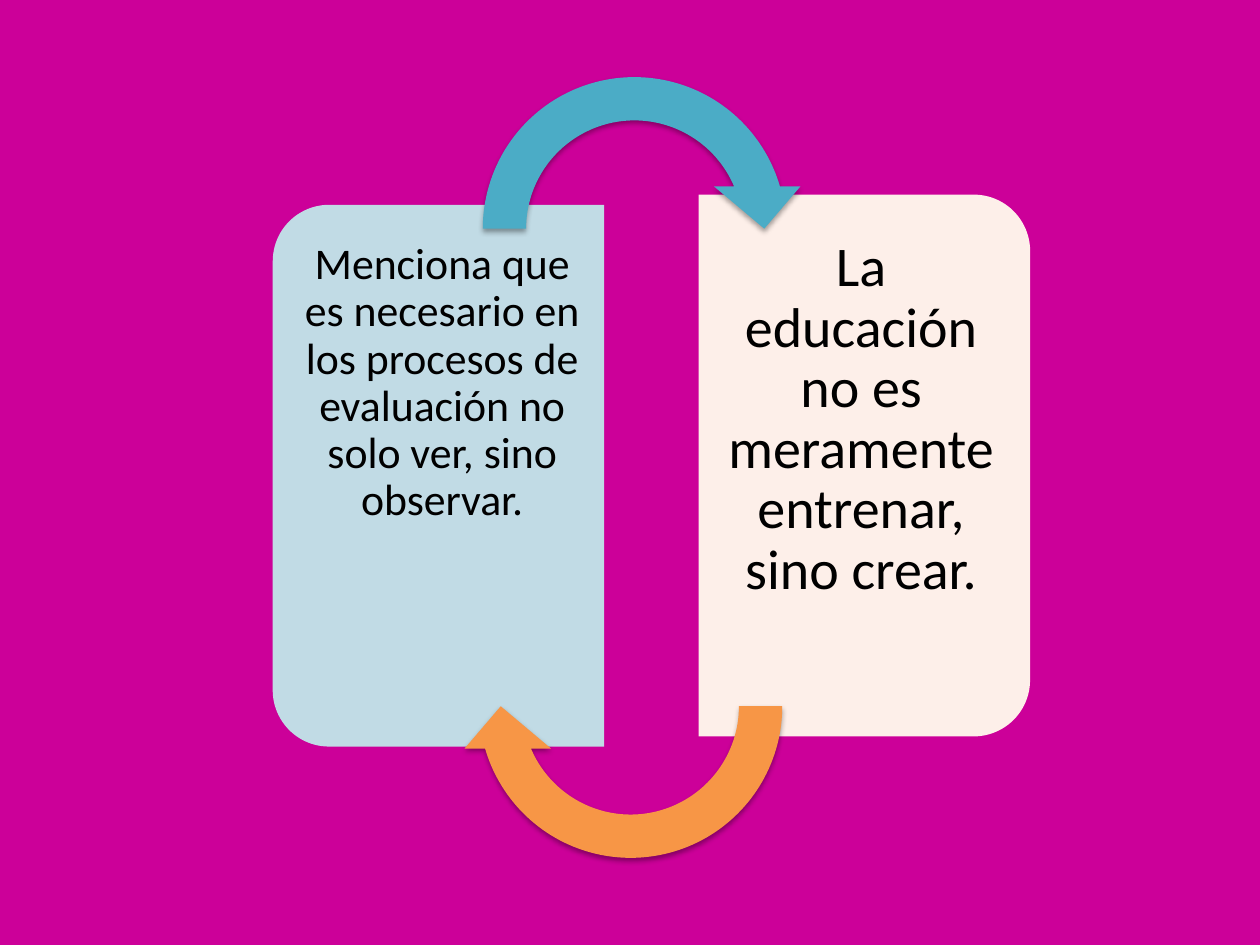
from lxml import etree
from pptx import Presentation
from pptx.dml.color import RGBColor
from pptx.enum.shapes import MSO_SHAPE
from pptx.enum.text import MSO_ANCHOR, PP_ALIGN
from pptx.oxml.ns import qn
from pptx.util import Inches, Pt

CARD = MSO_SHAPE.ROUND_2_SAME_RECTANGLE
ARROW = MSO_SHAPE.CIRCULAR_ARROW
TOP = MSO_ANCHOR.TOP
CENTER = PP_ALIGN.CENTER

THEME = {
    "font": "Calibri",
    "background": "CC0099",
    "ink": "000000",
    "observe": {"card": "C1DBE5", "arrow": "4BACC6", "size": 25},
    "create": {"card": "FDEFE9", "arrow": "F79646", "size": 32},
}

deck = Presentation()
deck.slide_width, deck.slide_height = Inches(10), Inches(7.5)
COLUMN = deck.slide_width / 100
ROW = deck.slide_height / 75
slide = deck.slides.add_slide(deck.slide_layouts[6])
slide.background.fill.solid()
slide.background.fill.fore_color.rgb = RGBColor.from_string(THEME["background"])


def place(left, top, width, height):
    return int(left * COLUMN), int(top * ROW), int(width * COLUMN), int(height * ROW)


def add_figure(preset, box, turn, color, adjustments):
    figure = slide.shapes.add_shape(preset, *place(*box))
    figure.rotation = turn
    figure.shadow.inherit = False
    figure.fill.solid()
    figure.fill.fore_color.rgb = RGBColor.from_string(color)
    figure.line.fill.background()
    for index, value in enumerate(adjustments):
        figure.adjustments[index] = value
    return figure


ideas = [
    ("observe", "Menciona que es necesario en los procesos de evaluación no solo ver, sino observar.",
     (13.3, 24.6), 270, (22.9, 17.5), (1, 1.7, 1.6, 1.7)),
    ("create", "La educación no es meramente entrenar, sino crear.",
     (47.1, 23.8), 90, (55.5, 16.7), (2, 2.2, 1.3, 2.2)),
]
for idea, wording, card_corner, turn, text_corner, insets in ideas:
    add_figure(CARD, (*card_corner, 43, 26.3), turn, THEME[idea]["card"], (0.17, 0))
    statement = slide.shapes.add_textbox(*place(*text_corner, 25, 40.5)).text_frame
    left, top, right, bottom = insets
    frame_format = {
        "word_wrap": True,
        "vertical_anchor": TOP,
        "margin_left": int(left * COLUMN),
        "margin_top": int(top * ROW),
        "margin_right": int(right * COLUMN),
        "margin_bottom": int(bottom * ROW),
    }
    for name, value in frame_format.items():
        setattr(statement, name, value)
    sentence = statement.paragraphs[0]
    for name, value in {"alignment": CENTER, "line_spacing": 0.9}.items():
        setattr(sentence, name, value)
    words = sentence.add_run()
    words.text = wording
    for name, value in {"name": THEME["font"], "size": Pt(THEME[idea]["size"])}.items():
        setattr(words.font, name, value)
    words.font.color.rgb = RGBColor.from_string(THEME["ink"])

for idea, corner, turn in [("observe", (36.6, 4.4), 0), ("create", (36.3, 42.3), 180)]:
    cycle = add_figure(ARROW, (*corner, 27.5, 27.5), turn, THEME[idea]["arrow"],
                       (0.12, 11.42, 204.58, 108, 0.12))
    cycle.adjustments[0] = cycle.adjustments[4] = 1 / 8
    effects = cycle.element.spPr.find(qn("a:effectLst"))
    shade = etree.SubElement(effects, qn("a:outerShdw"), blurRad=str(Pt(3.1)),
                             dist=str(Pt(1.8)), dir="5400000", rotWithShape="0")
    tint = etree.SubElement(shade, qn("a:srgbClr"), val=THEME["ink"])
    etree.SubElement(tint, qn("a:alpha"), val="35000")

deck.save("out.pptx")
